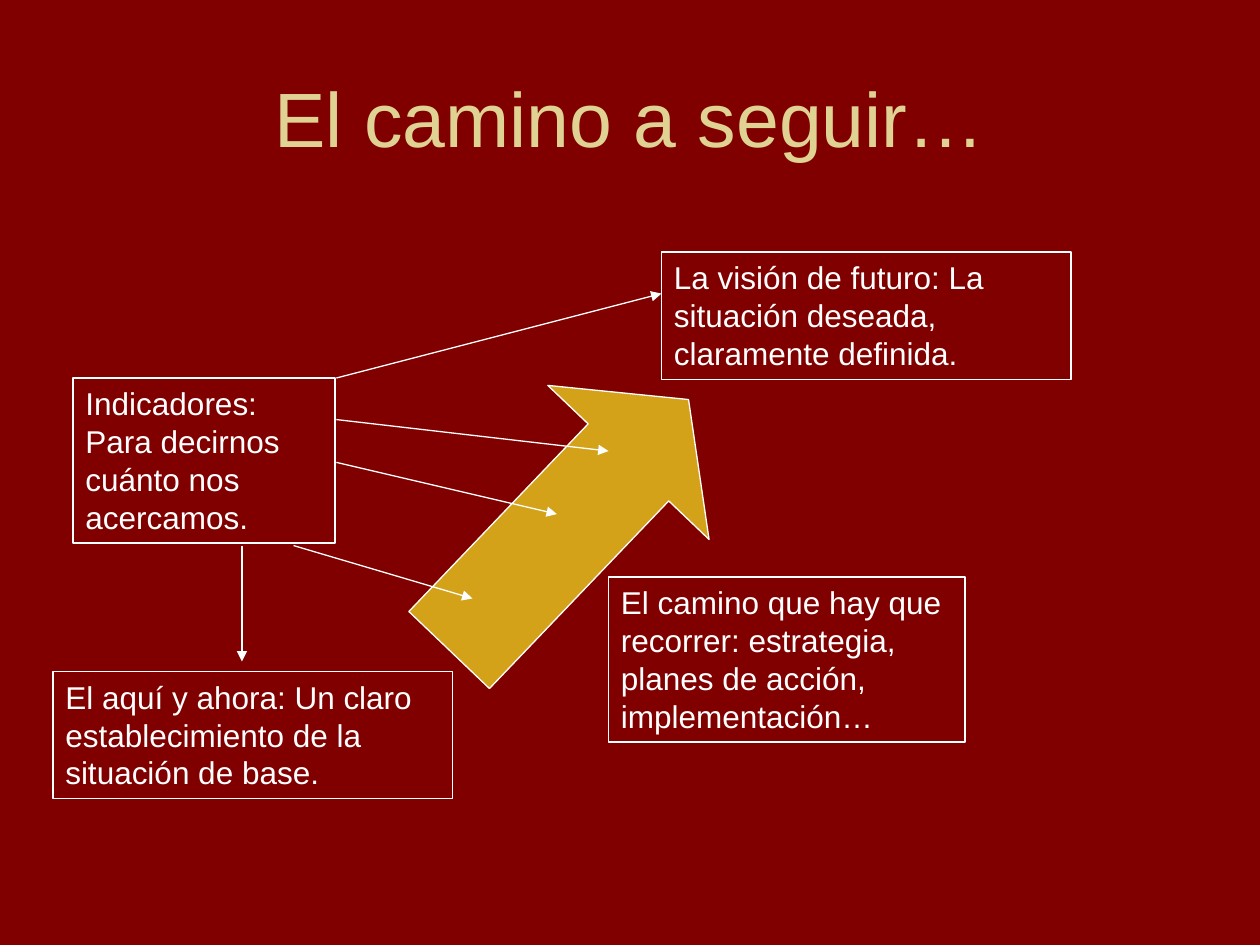
from lxml import etree
from pptx import Presentation
from pptx.dml.color import RGBColor
from pptx.enum.shapes import MSO_CONNECTOR, MSO_SHAPE
from pptx.enum.text import MSO_ANCHOR, PP_ALIGN
from pptx.oxml.ns import qn
from pptx.util import Inches, Pt

MAROON = RGBColor(0x80, 0x00, 0x00)
SAND = RGBColor(0xDF, 0xD2, 0x93)
GOLD = RGBColor(0xD3, 0xA2, 0x19)
WHITE = RGBColor(0xFF, 0xFF, 0xFF)

RIGHT_ARROW = MSO_SHAPE.RIGHT_ARROW
RECTANGLE = MSO_SHAPE.RECTANGLE
STRAIGHT = MSO_CONNECTOR.STRAIGHT
LEFT, CENTER = PP_ALIGN.LEFT, PP_ALIGN.CENTER
TOP, MIDDLE = MSO_ANCHOR.TOP, MSO_ANCHOR.MIDDLE

# left, top, width, height, text
STAGES = [
    (0.42, 5.33, 3.17, 1.01,
     "El aquí y ahora: Un claro establecimiento de la situación de base."),
    (5.25, 2, 3.25, 1.01,
     "La visión de futuro: La situación deseada, claramente definida."),
    (4.83, 4.58, 2.83, 1.31,
     "El camino que hay que recorrer: estrategia, planes de acción, implementación…"),
    (0.58, 3, 2.08, 1.31,
     "Indicadores: Para decirnos cuánto nos acercamos."),
]

# start and end of each pointer that leaves the indicators box
POINTERS = [
    ((2.33, 4.33), (3.75, 4.75)),
    ((2.67, 3.67), (4.42, 4.08)),
    ((2.67, 3.33), (4.83, 3.58)),
    ((1.92, 4.33), (1.92, 5.25)),
    ((2.67, 3), (5.25, 2.33)),
]


class Painter:
    """Holds the slide and its style."""

    font_name = "Arial"
    body_size = Pt(18)
    title_size = Pt(44)
    line_width = Pt(0.75)

    def __init__(self, page):
        self.page = page
        page.background.fill.solid()
        page.background.fill.fore_color.rgb = MAROON

    def outline(self, line):
        line.color.rgb = WHITE
        line.width = self.line_width

    def set_text(self, box, text, size, color, align, anchor):
        frame = box.text_frame
        frame.word_wrap = True
        frame.vertical_anchor = anchor
        para = frame.paragraphs[0]
        para.text = text
        para.alignment = align
        para.font.name = self.font_name
        para.font.size = size
        para.font.color.rgb = color

    def title(self, left, top, width, height, text):
        box = self.page.shapes.add_textbox(
            *map(Inches, (left, top, width, height)))
        self.set_text(box, text, self.title_size, SAND, CENTER, MIDDLE)

    def shape(self, kind, left, top, width, height):
        shape = self.page.shapes.add_shape(
            kind, *map(Inches, (left, top, width, height)))
        shape.shadow.inherit = False
        self.outline(shape.line)
        return shape

    def text_box(self, left, top, width, height, text):
        box = self.shape(RECTANGLE, left, top, width, height)
        box.fill.background()
        self.set_text(box, text, self.body_size, WHITE, LEFT, TOP)

    def block_arrow(self, left, top, width, height, rotation, head):
        arrow = self.shape(RIGHT_ARROW, left, top, width, height)
        arrow.adjustments[1] = head
        arrow.rotation = rotation
        arrow.fill.solid()
        arrow.fill.fore_color.rgb = GOLD

    def pointer(self, start, end):
        connector = self.page.shapes.add_connector(
            STRAIGHT, *map(Inches, (*start, *end)))
        self.outline(connector.line)
        properties = connector._element.spPr
        etree.SubElement(properties.find(qn("a:ln")), qn("a:tailEnd"),
                         type="triangle")
        etree.SubElement(properties, qn("a:effectLst"))


def main():
    deck = Presentation()
    deck.slide_width, deck.slide_height = Inches(10), Inches(7.5)
    painter = Painter(deck.slides.add_slide(deck.slide_layouts[6]))

    painter.title(0.5, 0.3, 9, 1.25, "El camino a seguir…")
    painter.block_arrow(3.14, 3.28, 2.75, 1.77, rotation=313.7, head=0.39)
    for stage in STAGES:
        painter.text_box(*stage)
    for start, end in POINTERS:
        painter.pointer(start, end)

    deck.save("out.pptx")


if __name__ == "__main__":
    main()
